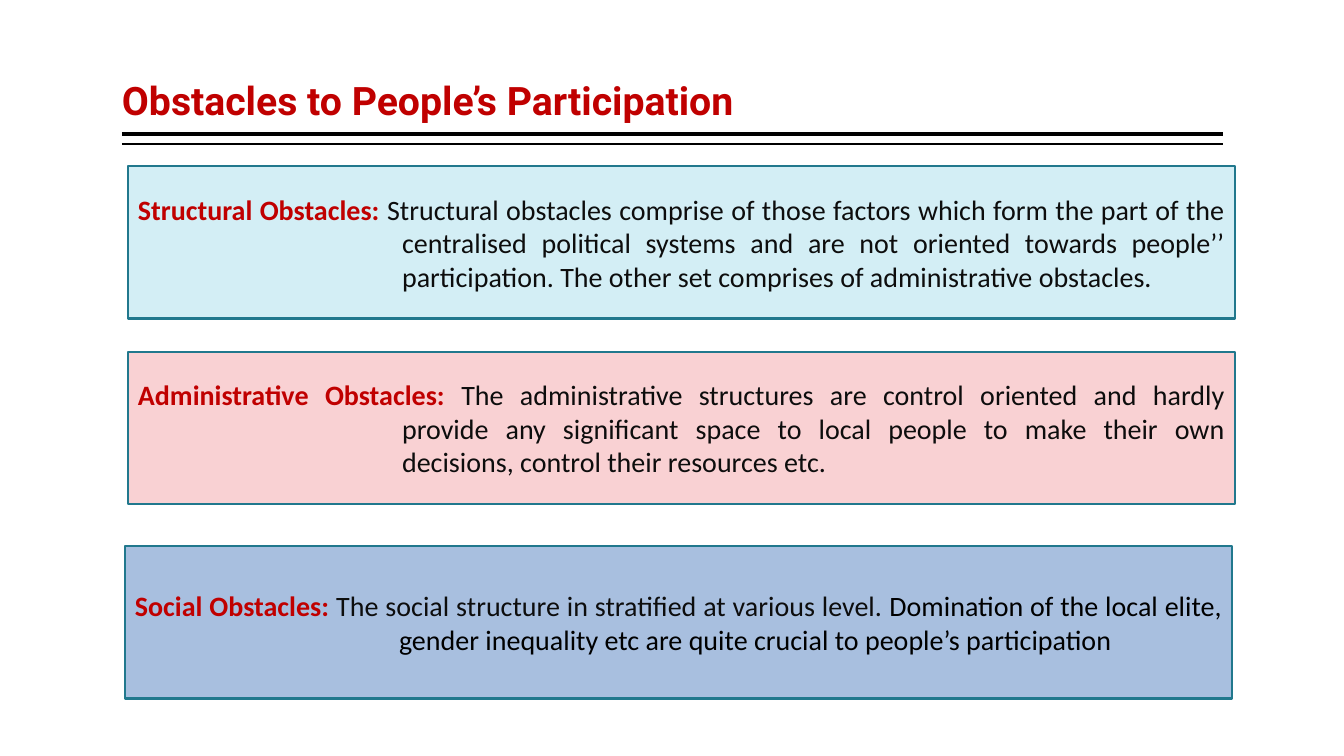
import dataclasses
import typing

import lxml.etree
import pptx
import pptx.dml.color
import pptx.enum.shapes
import pptx.enum.text
import pptx.oxml.ns
import pptx.util

COLUMN = ROW = pptx.util.Inches(0.1)
SLIDE_COLUMNS, SLIDE_ROWS = 133.33, 75
LEFT, RIGHT = 12.1, 121.3
PANEL_COLUMNS, PANEL_ROWS = 109.8, 15.1
HANGING_COLUMNS = 26.2

COLORS = {
    "heading": "C00000",
    "body": "0D0D0D",
    "black": "000000",
    "border": "21788D",
    "structural": "D3EEF5",
    "administrative": "F9D1D3",
    "social": "A8BFDF",
}

TITLE_FONT = {"name": "Roboto", "size": pptx.util.Pt(28), "bold": True}
LABEL_FONT = {"name": "Calibri", "size": pptx.util.Pt(20), "bold": True}
BODY_FONT = LABEL_FONT | {"bold": False}
TITLE_FRAME = {
    "word_wrap": True,
    "vertical_anchor": pptx.enum.text.MSO_ANCHOR.BOTTOM,
    "margin_left": 0,
    "margin_right": 0,
}
PANEL_FRAME = {
    "word_wrap": True,
    "vertical_anchor": pptx.enum.text.MSO_ANCHOR.MIDDLE,
}


@dataclasses.dataclass(frozen=True)
class Rule:
    row: float
    points: float


@dataclasses.dataclass(frozen=True)
class Panel:
    column: float
    row: float
    fill: str
    label: str
    body: str
    ending: str = ""


RULES = [Rule(13.3, 3), Rule(14.3, 1)]

PANELS = [
    Panel(
        12.7, 16.5, "structural", "Structural Obstacles: ",
        "Structural obstacles comprise of those factors which form the part of the "
        "centralised political systems and are not oriented towards people’’ "
        "participation. The other set comprises of administrative obstacles. ",
    ),
    Panel(
        12.7, 34.9, "administrative", "Administrative Obstacles: ",
        "The administrative structures are control oriented and hardly provide any "
        "significant space to local people to make their own decisions, control "
        "their resources etc. ",
    ),
    Panel(
        12.4, 54.2, "social", "Social Obstacles: ",
        "The social structure in stratified at various level. ",
        "Domination of the local elite, gender inequality etc are quite crucial to "
        "people’s participation",
    ),
]


def columns(count: float) -> int:
    return round(count * COLUMN)


def rows(count: float) -> int:
    return round(count * ROW)


def color(name: str) -> pptx.dml.color.RGBColor:
    return pptx.dml.color.RGBColor.from_string(COLORS[name])


def apply_format(target: typing.Any, values: dict[str, typing.Any]) -> None:
    for name, value in values.items():
        setattr(target, name, value)


def add_run(paragraph: typing.Any, text: str, font: dict[str, typing.Any], ink: str) -> None:
    run = paragraph.add_run()
    run.text = text
    apply_format(run.font, font)
    run.font.color.rgb = color(ink)


def draw_title(slide: typing.Any, text: str) -> None:
    shape = slide.shapes.add_textbox(
        columns(LEFT), rows(0.8), columns(RIGHT - LEFT), rows(12)
    )
    apply_format(shape.text_frame, TITLE_FRAME)
    paragraph = shape.text_frame.paragraphs[0]
    paragraph.line_spacing = 0.9
    add_run(paragraph, text, TITLE_FONT, "heading")


def draw_rule(slide: typing.Any, rule: Rule) -> None:
    connector = slide.shapes.add_connector(
        pptx.enum.shapes.MSO_CONNECTOR.STRAIGHT,
        columns(LEFT), rows(rule.row), columns(RIGHT), rows(rule.row),
    )
    connector.line.color.rgb = color("black")
    connector.line.width = pptx.util.Pt(rule.points)
    lxml.etree.SubElement(
        connector._element.spPr, pptx.oxml.ns.qn("a:effectLst")
    )


def draw_panel(slide: typing.Any, panel: Panel) -> None:
    shape = slide.shapes.add_shape(
        pptx.enum.shapes.MSO_SHAPE.RECTANGLE,
        columns(panel.column), rows(panel.row),
        columns(PANEL_COLUMNS), rows(PANEL_ROWS),
    )
    shape.shadow.inherit = False
    shape.fill.solid()
    shape.fill.fore_color.rgb = color(panel.fill)
    shape.line.color.rgb = color("border")
    shape.line.width = pptx.util.Pt(1.5)
    apply_format(shape.text_frame, PANEL_FRAME)
    paragraph = shape.text_frame.paragraphs[0]
    paragraph.alignment = pptx.enum.text.PP_ALIGN.JUSTIFY
    properties = paragraph._p.get_or_add_pPr()
    properties.set("marL", str(columns(HANGING_COLUMNS)))
    properties.set("indent", str(-columns(HANGING_COLUMNS)))
    add_run(paragraph, panel.label, LABEL_FONT, "heading")
    add_run(paragraph, panel.body, BODY_FONT, "body")
    if panel.ending:
        add_run(paragraph, panel.ending, BODY_FONT, "black")


def main() -> None:
    presentation = pptx.Presentation()
    presentation.slide_width = columns(SLIDE_COLUMNS)
    presentation.slide_height = rows(SLIDE_ROWS)
    slide = presentation.slides.add_slide(presentation.slide_layouts[6])
    for rule in RULES:
        draw_rule(slide, rule)
    draw_title(slide, "Obstacles to People’s Participation")
    for panel in PANELS:
        draw_panel(slide, panel)
    presentation.save("out.pptx")


if __name__ == "__main__":
    main()
